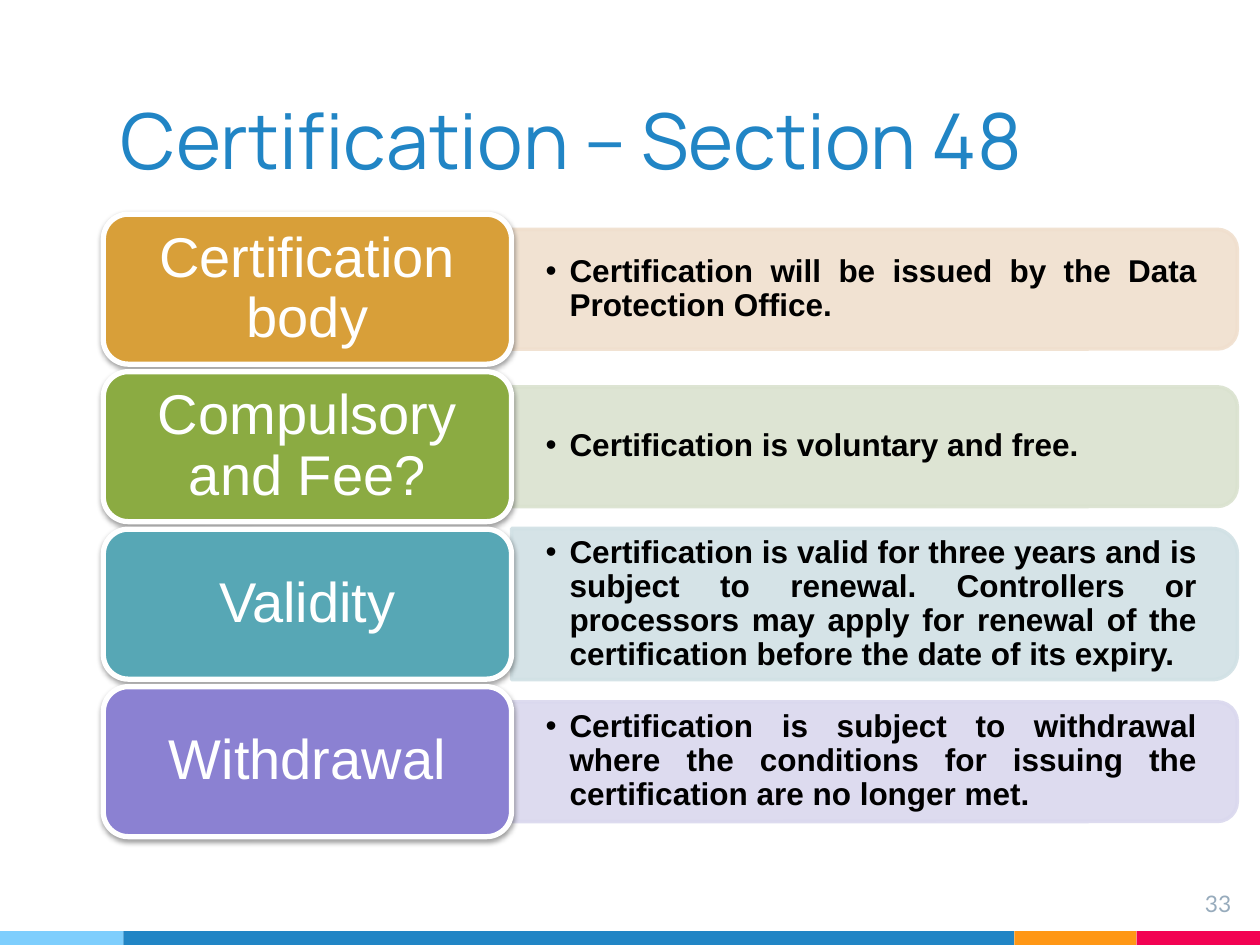
from lxml.etree import SubElement
from pptx import Presentation
from pptx.dml.color import RGBColor
from pptx.enum.shapes import MSO_SHAPE as Shape
from pptx.enum.text import MSO_ANCHOR as Anchor, MSO_AUTO_SIZE as AutoSize, PP_ALIGN as Align
from pptx.oxml.ns import qn
from pptx.util import Inches, Pt

BLACK = RGBColor(0x00, 0x00, 0x00)
WHITE = RGBColor(0xFF, 0xFF, 0xFF)
BLUE = RGBColor(0x21, 0x85, 0xC5)
SKY = RGBColor(0x7E, 0xCE, 0xFD)
ORANGE = RGBColor(0xFF, 0x97, 0x15)
RED = RGBColor(0xF2, 0x02, 0x53)
GREY = RGBColor(0x97, 0xAB, 0xBC)
OCHRE = RGBColor(0xD8, 0x9F, 0x39)
PALE_OCHRE = RGBColor(0xF0, 0xDF, 0xCE)
GREEN = RGBColor(0x8B, 0xAB, 0x42)
PALE_GREEN = RGBColor(0xDA, 0xE2, 0xCF)
TEAL = RGBColor(0x57, 0xA7, 0xB5)
PALE_TEAL = RGBColor(0xD1, 0xE1, 0xE5)
VIOLET = RGBColor(0x8B, 0x81, 0xD2)
PALE_VIOLET = RGBColor(0xDA, 0xD8, 0xEE)

WIDTH, HEIGHT = 10, 7.5
STRIPE_HEIGHT = 0.11
STRIPES = [(SKY, 0.98), (BLUE, 7.07), (ORANGE, 0.97), (RED, 0.98)]
TAB_LEFT, TAB_WIDTH, TAB_HEIGHT = 0.82, 3.24, 1.19
FIRST_ROW, ROW_PITCH = 1.7, 1.25
PANEL_LEFT, PANEL_WIDTH, TEXT_WIDTH = TAB_LEFT + TAB_WIDTH, 5.76, 5.71
ROWS = [
    ("Certification body", OCHRE, PALE_OCHRE, 0.95,
     "Certification will be issued by the Data Protection Office."),
    ("Compulsory and Fee?", GREEN, PALE_GREEN, 0.95,
     "Certification is voluntary and free."),
    ("Validity", TEAL, PALE_TEAL, 1.2,
     "Certification is valid for three years and is subject to renewal. "
     "Controllers or processors may apply for renewal of the certification "
     "before the date of its expiry."),
    ("Withdrawal", VIOLET, PALE_VIOLET, 0.95,
     "Certification is subject to withdrawal where the conditions for issuing "
     "the certification are no longer met."),
]


def set_text(shape, text, font, size, color, align, anchor, margins, bold=False):
    frame = shape.text_frame
    frame.word_wrap = True
    frame.auto_size = AutoSize.NONE
    frame.vertical_anchor = anchor
    frame.margin_left = frame.margin_right = Inches(margins[0])
    frame.margin_top = frame.margin_bottom = Inches(margins[1])
    paragraph = frame.paragraphs[0]
    paragraph.alignment = align
    run = paragraph.add_run()
    run.text = text
    run.font.name = font
    run.font.size = Pt(size)
    run.font.bold = bold
    run.font.color.rgb = color
    return paragraph


def set_indent(paragraph, left, first):
    properties = paragraph._p.get_or_add_pPr()
    properties.set("marL", str(Inches(left)))
    properties.set("indent", str(Inches(first)))
    return properties


def set_bullet(paragraph):
    properties = set_indent(paragraph, 0.19, -0.19)
    color = SubElement(properties, qn("a:buClr"))
    SubElement(color, qn("a:srgbClr"), val=str(BLACK))
    SubElement(properties, qn("a:buFont"), typeface="Arial")
    SubElement(properties, qn("a:buChar"), char="•")


def add_block(slide, kind, box, fill, line=None, line_width=0):
    shape = slide.shapes.add_shape(kind, *map(Inches, box))
    shape.shadow.inherit = False
    shape.fill.solid()
    shape.fill.fore_color.rgb = fill
    if line is None:
        shape.line.fill.background()
    else:
        shape.line.color.rgb = line
        shape.line.width = Pt(line_width)
    return shape


def add_soft_shadow(shape):
    effects = shape._element.spPr.find(qn("a:effectLst"))
    shadow = SubElement(effects, qn("a:outerShdw"), blurRad=str(Pt(3.1)),
                        dist=str(Pt(1.6)), dir="5400000", rotWithShape="0")
    color = SubElement(shadow, qn("a:srgbClr"), val=str(BLACK))
    SubElement(color, qn("a:alpha"), val="38000")


def add_panel(slide, middle, height, fill, text):
    center = PANEL_LEFT + PANEL_WIDTH / 2
    box = (center - height / 2, middle - PANEL_WIDTH / 2, height, PANEL_WIDTH)
    panel = add_block(slide, Shape.ROUND_2_SAME_RECTANGLE, box, fill, fill, 2)
    panel.rotation = 90
    for color in panel._element.spPr.iter(qn("a:srgbClr")):
        SubElement(color, qn("a:alpha"), val="90000")
    text_height = height - 0.1
    text_box = slide.shapes.add_textbox(
        Inches(PANEL_LEFT), Inches(middle - text_height / 2),
        Inches(TEXT_WIDTH), Inches(text_height))
    paragraph = set_text(text_box, text, "Arial", 18, BLACK, Align.JUSTIFY,
                         Anchor.MIDDLE, (0.27, 0.14), bold=True)
    paragraph.level = 1
    paragraph.line_spacing = 0.9
    set_bullet(paragraph)


def add_tab(slide, top, fill, text):
    box = (TAB_LEFT, top, TAB_WIDTH, TAB_HEIGHT)
    tab = add_block(slide, Shape.ROUNDED_RECTANGLE, box, fill, WHITE, 3)
    add_soft_shadow(tab)
    paragraph = set_text(tab, text, "Arial", 32, WHITE, Align.CENTER,
                         Anchor.MIDDLE, (0.13, 0.07))
    paragraph.line_spacing = 0.9


def add_stripes(slide):
    left = 0
    for color, width in STRIPES:
        box = (left, HEIGHT - STRIPE_HEIGHT, width, STRIPE_HEIGHT)
        add_block(slide, Shape.RECTANGLE, box, color)
        left += width


def add_title(slide):
    title = slide.shapes.title
    title.left, title.top, title.width, title.height = map(
        Inches, (TAB_LEFT, 0.57, 7.69, 1))
    paragraph = set_text(title, "Certification – Section 48", "Manrope", 44, BLUE,
                         Align.JUSTIFY, Anchor.BOTTOM, (0.1, 0.1))
    set_indent(paragraph, 0.04, 0)


def add_page_number(slide):
    number = slide.shapes.add_textbox(*map(Inches, (9.27, 6.96, 0.6, 0.46)))
    set_text(number, "33", "Lato", 13, GREY, Align.RIGHT, Anchor.TOP, (0.1, 0.1))


def main():
    presentation = Presentation()
    presentation.slide_width = Inches(WIDTH)
    presentation.slide_height = Inches(HEIGHT)
    slide = presentation.slides.add_slide(presentation.slide_layouts[5])
    add_stripes(slide)
    add_title(slide)
    add_page_number(slide)
    for index, (label, strong, pale, panel_height, text) in enumerate(ROWS):
        top = FIRST_ROW + index * ROW_PITCH
        add_panel(slide, top + TAB_HEIGHT / 2, panel_height, pale, text)
        add_tab(slide, top, strong, label)
    presentation.save("out.pptx")


if __name__ == "__main__":
    main()
